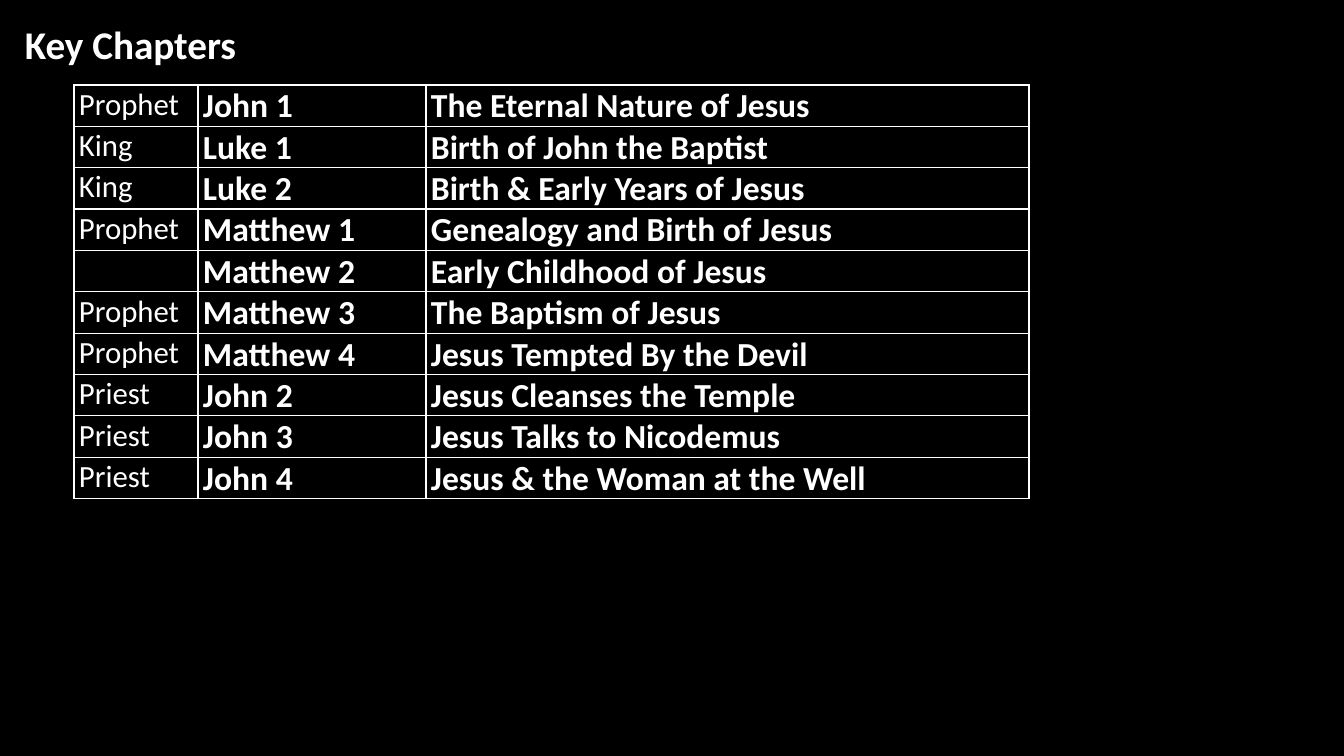
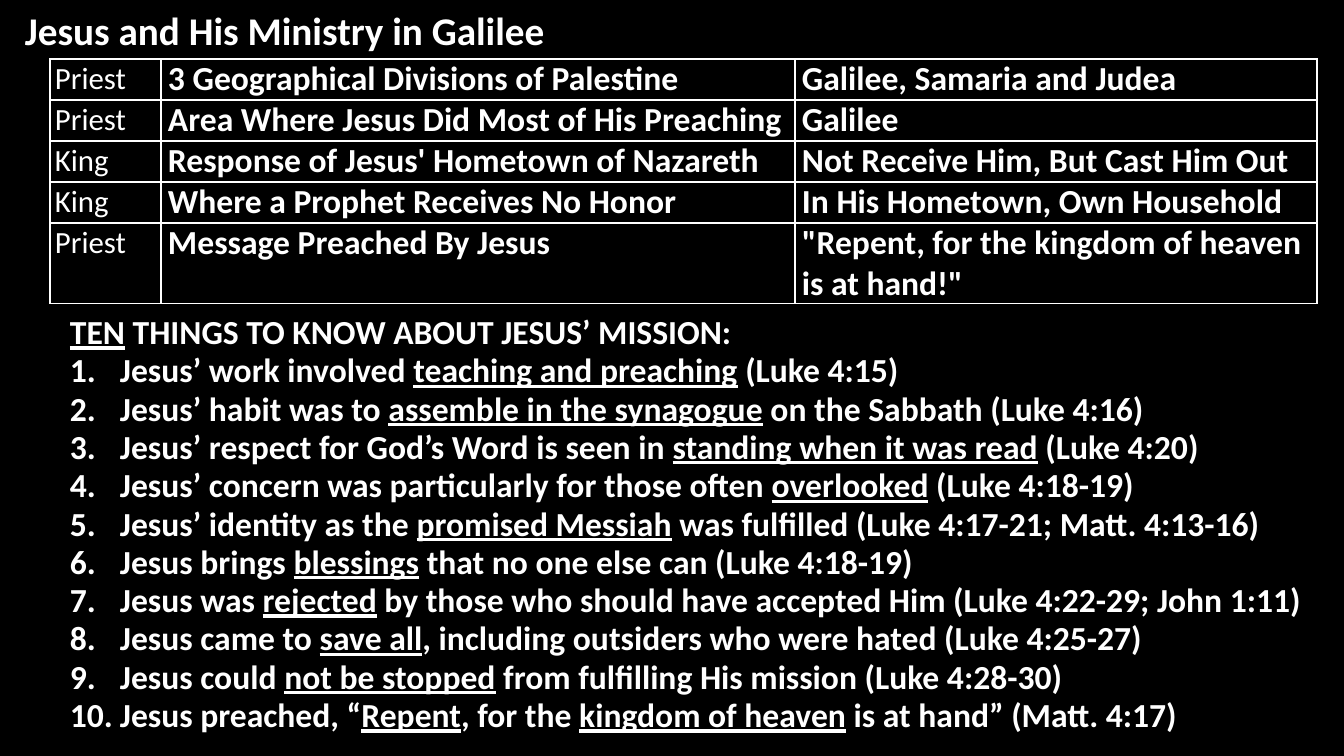
from lxml import etree
from pptx import Presentation
from pptx.dml.color import RGBColor
from pptx.enum.text import MSO_AUTO_SIZE
from pptx.oxml import parse_xml
from pptx.oxml.ns import nsdecls, qn
from pptx.util import Emu, Pt

GROW = MSO_AUTO_SIZE.SHAPE_TO_FIT_TEXT
BLACK = RGBColor(0x00, 0x00, 0x00)
WHITE = RGBColor(0xFF, 0xFF, 0xFF)
FONT = "Calibri"
BLANK_LAYOUT = 6
PX = 914400 / 100.8

# Text formats
TITLE = {"size": Pt(28), "bold": True}
BODY = {"size": Pt(24), "bold": True}
ROLE = {"size": Pt(22), "bold": False}

# Cell margins in px: left, top, right, bottom
TIGHT = (5, 1, 1, 0)
WIDE = (7, 0, 7, 0)

KEY_CHAPTERS = [
    ("Prophet", "John 1", "The Eternal Nature of Jesus"),
    ("King", "Luke 1", "Birth of John the Baptist"),
    ("King", "Luke 2", "Birth & Early Years of Jesus"),
    ("Prophet", "Matthew 1", "Genealogy and Birth of Jesus"),
    ("", "Matthew 2", "Early Childhood of Jesus"),
    ("Prophet", "Matthew 3", "The Baptism of Jesus"),
    ("Prophet", "Matthew 4", "Jesus Tempted By the Devil"),
    ("Priest", "John 2", "Jesus Cleanses the Temple"),
    ("Priest", "John 3", "Jesus Talks to Nicodemus"),
    ("Priest", "John 4", "Jesus & the Woman at the Well"),
]

GALILEE_FACTS = [
    ("Priest", "3 Geographical Divisions of Palestine", "Galilee, Samaria and Judea"),
    ("Priest", "Area Where Jesus Did Most of His Preaching", "Galilee"),
    ("King", "Response of Jesus' Hometown of Nazareth", "Not Receive Him, But Cast Him Out"),
    ("King", "Where a Prophet Receives No Honor", "In His Hometown, Own Household"),
    ("Priest", "Message Preached By Jesus", '"Repent, for the kingdom of heaven is at hand!"'),
]

# Words between underscores are underlined
MISSION_HEADING = "_TEN_ THINGS TO KNOW ABOUT JESUS’ MISSION:"
MISSION_POINTS = [
    "Jesus’ work involved _teaching and preaching_ (Luke 4:15)",
    "Jesus’ habit was to _assemble in the synagogue_ on the Sabbath (Luke 4:16)",
    "Jesus’ respect for God’s Word is seen in _standing when it was read_ (Luke 4:20)",
    "Jesus’ concern was particularly for those often _overlooked_ (Luke 4:18-19)",
    "Jesus’ identity as the _promised Messiah_ was fulfilled (Luke 4:17-21; Matt. 4:13-16)",
    "Jesus brings _blessings_ that no one else can (Luke 4:18-19)",
    "Jesus was _rejected_ by those who should have accepted Him (Luke 4:22-29; John 1:11)",
    "Jesus came to _save all_, including outsiders who were hated (Luke 4:25-27)",
    "Jesus could _not be stopped_ from fulfilling His mission (Luke 4:28-30)",
    "Jesus preached, “_Repent_, for the _kingdom of heaven_ is at hand” (Matt. 4:17)",
]


def px(length):
    return Emu(round(length * PX))


class SlideBuilder:
    def __init__(self):
        self.deck = Presentation()
        self.deck.slide_width, self.deck.slide_height = px(1344), px(756)
        self.page = None

    def new_page(self, title, title_top):
        layout = self.deck.slide_layouts[BLANK_LAYOUT]
        self.page = self.deck.slides.add_slide(layout)
        fill = self.page.background.fill
        fill.solid()
        fill.fore_color.rgb = BLACK
        frame = self.text_box(15, title_top, 1175, 57)
        self.add_text(frame.paragraphs[0], title, TITLE)

    def text_box(self, left, top, width, height):
        box = self.page.shapes.add_textbox(px(left), px(top), px(width), px(height))
        frame = box.text_frame
        frame.word_wrap = True
        frame.auto_size = GROW
        return frame

    def add_text(self, para, text, style):
        for index, part in enumerate(text.split("_")):
            if not part:
                continue
            span = para.add_run()
            span.text = part
            for name, value in {"name": FONT, **style}.items():
                setattr(span.font, name, value)
            span.font.color.rgb = WHITE
            if index % 2:
                span.font.underline = True

    def numbered_list(self, left, top, width, height, heading, points):
        frame = self.text_box(left, top, width, height)
        for index, text in enumerate([heading, *points]):
            para = frame.add_paragraph() if index else frame.paragraphs[0]
            para.line_spacing = 0.95
            self.add_text(para, text, BODY)
            if index:
                props = para._p.get_or_add_pPr()
                props.set("marL", str(px(50)))
                props.set("indent", str(px(-50)))
                number = etree.SubElement(props, qn("a:buAutoNum"))
                number.set("type", "arabicPeriod")

    def table(self, left, top, widths, heights, rows, margins):
        shape = self.page.shapes.add_table(
            len(rows), len(widths), px(left), px(top), px(sum(widths)), px(sum(heights)))
        grid = shape.table
        grid.first_row = grid.horz_banding = False
        for column, width in zip(grid.columns, widths):
            column.width = px(width)
        for row, height, texts in zip(grid.rows, heights, rows):
            row.height = px(height)
            for index, (cell, text) in enumerate(zip(row.cells, texts)):
                self.cell(cell, text, BODY if index else ROLE, margins[index])

    def cell(self, cell, text, style, margins):
        for side, margin in zip(("left", "top", "right", "bottom"), margins):
            setattr(cell, f"margin_{side}", px(margin))
        cell.fill.background()
        self.add_text(cell.text_frame.paragraphs[0], text, style)
        # Borders come before the fill
        props = cell._tc.get_or_add_tcPr()
        for place, side in enumerate("LRTB"):
            props.insert(place, parse_xml(
                f'<a:ln{side} {nsdecls("a")} w="{Pt(1)}"><a:solidFill>'
                f'<a:srgbClr val="{WHITE}"/></a:solidFill></a:ln{side}>'))


def main():
    builder = SlideBuilder()

    # Key chapters
    builder.new_page("Key Chapters", 15)
    builder.table(74, 85, (124, 228, 603), [41] * len(KEY_CHAPTERS),
                  KEY_CHAPTERS, (TIGHT, TIGHT, TIGHT))

    # Ministry in Galilee
    builder.new_page("Jesus and His Ministry in Galilee", 1)
    builder.table(50, 59, (111, 634, 522), (41, 41, 41, 41, 80),
                  GALILEE_FACTS, (TIGHT, WIDE, WIDE))
    builder.numbered_list(60, 309, 1256, 435, MISSION_HEADING, MISSION_POINTS)

    builder.deck.save("out.pptx")


if __name__ == "__main__":
    main()
